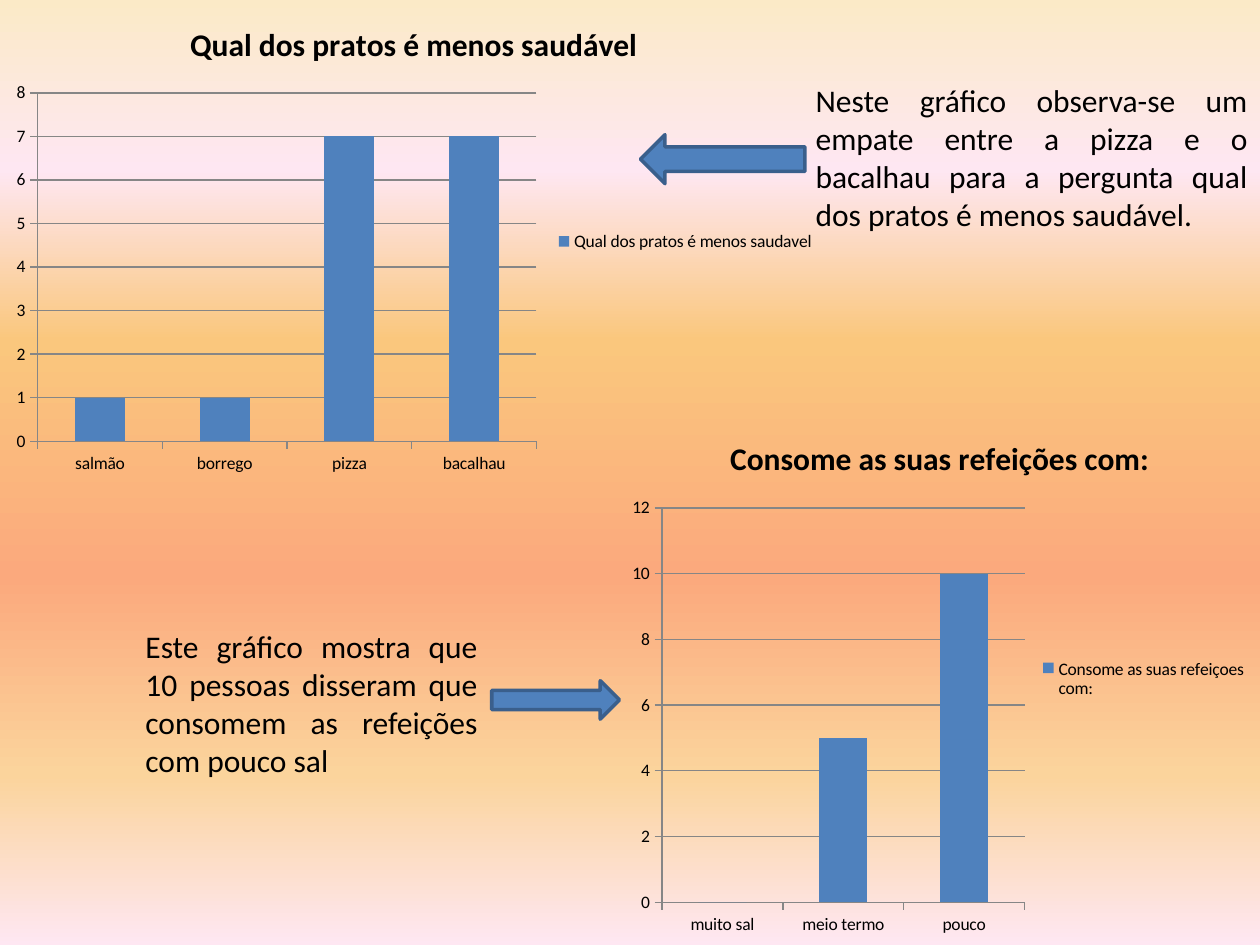
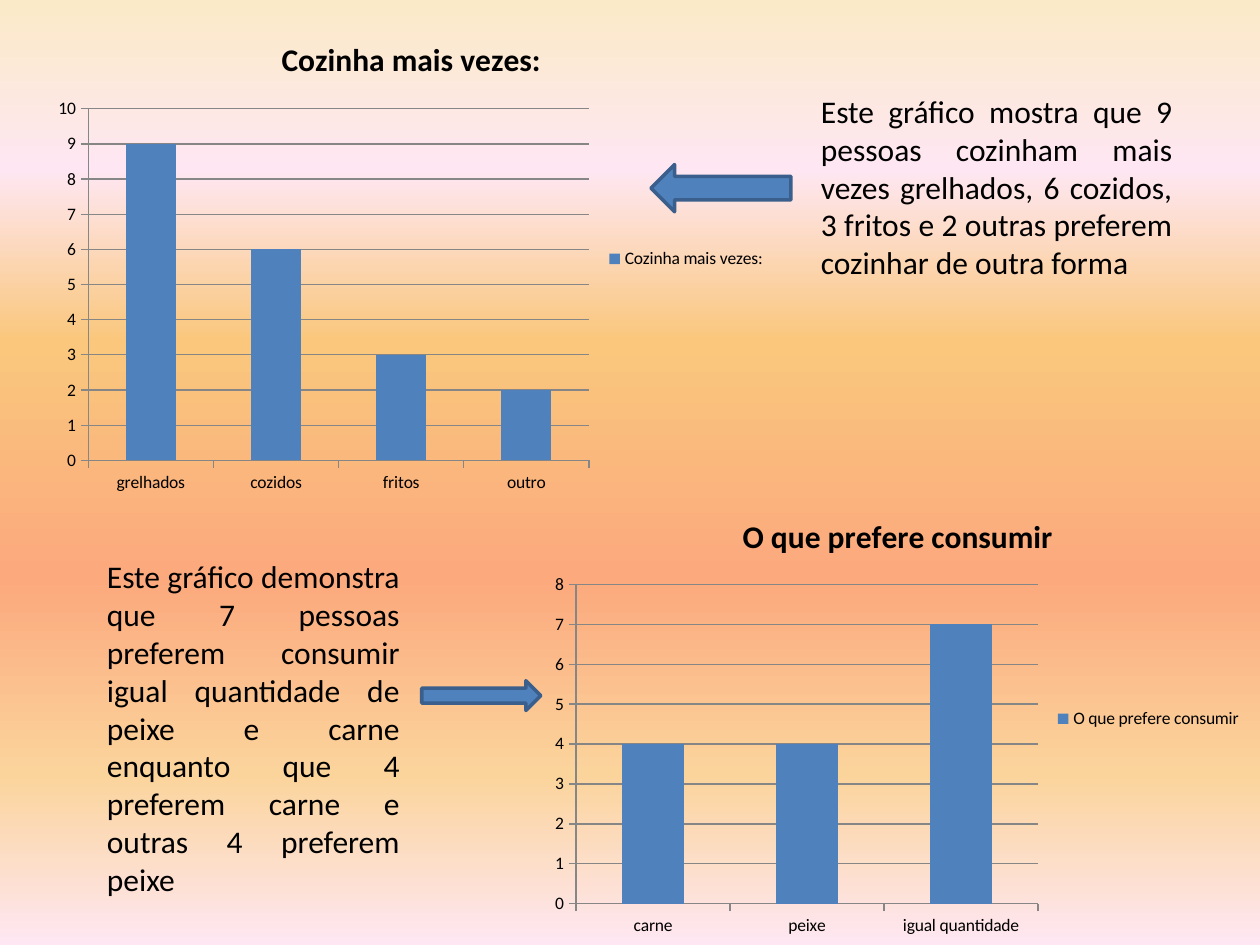
from copy import deepcopy
from dataclasses import dataclass

from pptx import Presentation
from pptx.chart.data import CategoryChartData
from pptx.dml.color import RGBColor
from pptx.enum.chart import XL_CHART_TYPE, XL_LEGEND_POSITION, XL_TICK_MARK
from pptx.enum.shapes import MSO_SHAPE
from pptx.enum.text import MSO_AUTO_SIZE, PP_ALIGN
from pptx.oxml.ns import qn
from pptx.util import Pt


@dataclass(frozen=True)
class Theme:
    font: str = "Calibri"
    ink: str = "000000"
    blue: str = "4F81BD"
    edge: str = "3A5F8C"
    grid: str = "868686"
    large: int = 18
    small: int = 10
    stops: tuple = ((0, "FBEAC7"), (18, "FEE7F2"), (36, "FAC77D"),
                    (61, "FBA97D"), (82, "FBD49C"), (100, "FEE7F2"))


def points(box):
    return [Pt(n) for n in box]


class Deck:
    def __init__(self, theme):
        self.theme = theme
        self.show = Presentation()
        self.show.slide_width, self.show.slide_height = Pt(720), Pt(540)
        self.slide = None
        self.paint()

    def paint(self):
        """Give the master the gradient that every slide inherits."""
        master = self.show.slide_master
        fill = master.background.fill
        fill.gradient()
        fill.gradient_angle = 270
        stops = master.element.find(".//" + qn("p:bg")).find(".//" + qn("a:gsLst"))
        while len(stops) < len(self.theme.stops):
            stops.append(deepcopy(stops[0]))
        for stop, (place, tint) in zip(fill.gradient_stops, self.theme.stops):
            stop.position = place / 100
            stop.color.rgb = RGBColor.from_string(tint)

    def page(self):
        self.slide = self.show.slides.add_slide(self.show.slide_layouts[6])

    def style(self, font, size, bold=False):
        font.name, font.size, font.bold = self.theme.font, Pt(size), bold
        font.color.rgb = RGBColor.from_string(self.theme.ink)

    def stroke(self, line, tint, width):
        line.color.rgb = RGBColor.from_string(tint)
        line.width = Pt(width)

    def chart(self, box, title, name, bars, top, step):
        theme = self.theme
        data = CategoryChartData()
        data.categories = list(bars)
        data.add_series(name, list(bars.values()))
        chart = self.slide.shapes.add_chart(
            XL_CHART_TYPE.COLUMN_CLUSTERED, *points(box), data).chart
        self.style(chart.font, theme.small)

        chart.has_title = True
        head = chart.chart_title
        head.include_in_layout = False
        head.text_frame.text = title
        self.style(head.text_frame.paragraphs[0].font, theme.large, True)

        chart.has_legend = True
        chart.legend.position = XL_LEGEND_POSITION.RIGHT
        chart.legend.include_in_layout = False

        for axis in (chart.category_axis, chart.value_axis):
            axis.major_tick_mark = XL_TICK_MARK.OUTSIDE
            axis.minor_tick_mark = XL_TICK_MARK.NONE
            self.stroke(axis.format.line, theme.grid, 0.75)
        scale = chart.value_axis
        scale.minimum_scale, scale.maximum_scale = 0, top
        scale.major_unit = step
        scale.has_major_gridlines = True
        self.stroke(scale.major_gridlines.format.line, theme.grid, 0.75)

        plot = chart.plots[0]
        plot.gap_width = 150
        plot.vary_by_categories = False
        fill = plot.series[0].format.fill
        fill.solid()
        fill.fore_color.rgb = RGBColor.from_string(theme.blue)

    def text(self, box, words):
        frame = self.slide.shapes.add_textbox(*points(box)).text_frame
        frame.word_wrap = True
        frame.auto_size = MSO_AUTO_SIZE.SHAPE_TO_FIT_TEXT
        frame.text = words
        para = frame.paragraphs[0]
        para.alignment = PP_ALIGN.JUSTIFY
        self.style(para.font, self.theme.large)

    def arrow(self, box, kind):
        shape = self.slide.shapes.add_shape(kind, *points(box))
        shape.shadow.inherit = False
        shape.fill.solid()
        shape.fill.fore_color.rgb = RGBColor.from_string(self.theme.blue)
        self.stroke(shape.line, self.theme.edge, 2)


def main():
    deck = Deck(Theme())
    left, right = MSO_SHAPE.LEFT_ARROW, MSO_SHAPE.RIGHT_ARROW

    deck.page()
    deck.chart((0, 0, 473, 276), "Qual dos pratos é menos saudável",
               "Qual dos pratos é menos saudavel",
               {"salmão": 1, "borrego": 1, "pizza": 7, "bacalhau": 7}, 8, 1)
    deck.chart((354, 236, 366, 304), "Consome as suas refeições com:",
               "Consome as suas refeiçoes com:",
               {"muito sal": 0, "meio termo": 5, "pouco": 10}, 12, 2)
    deck.text((459, 43, 261, 94),
              "Neste gráfico observa-se um empate entre a pizza e o bacalhau "
              "para a pergunta qual dos pratos é menos saudável.")
    deck.text((76, 355, 204, 94),
              "Este gráfico mostra que 10 pessoas disseram que consomem "
              "as refeições com pouco sal")
    deck.arrow((366, 77, 94, 28), left)
    deck.arrow((281, 389, 73, 22), right)

    deck.page()
    deck.chart((25, 9, 420, 278), "Cozinha mais vezes:", "Cozinha mais vezes:",
               {"grelhados": 9, "cozidos": 6, "fritos": 3, "outro": 2}, 10, 1)
    deck.chart((309, 281.5, 408, 258.5), "O que prefere consumir",
               "O que prefere consumir",
               {"carne": 4, "peixe": 4, "igual quantidade": 7}, 8, 1)
    deck.text((462, 49, 215, 117),
              "Este gráfico mostra que 9 pessoas cozinham mais vezes grelhados, "
              "6 cozidos, 3 fritos e 2 outras preferem cozinhar de outra forma")
    deck.text((54, 315, 181.5, 204),
              "Este gráfico demonstra que 7 pessoas preferem consumir igual "
              "quantidade de peixe e carne enquanto que 4 preferem carne e "
              "outras 4 preferem peixe")
    deck.arrow((241, 389, 68, 17), right)
    deck.arrow((372, 94, 80, 27), left)

    deck.show.save("out.pptx")


if __name__ == "__main__":
    main()
